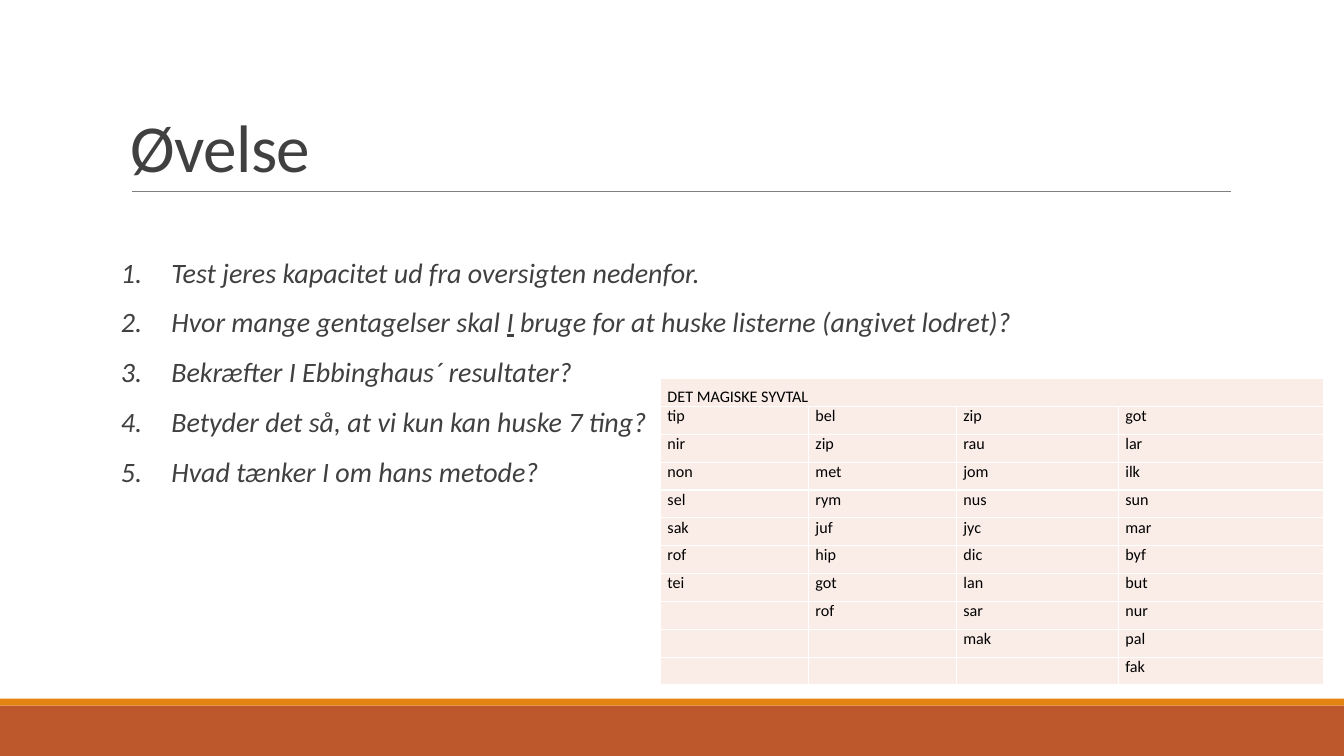
from pptx import Presentation, util as u
from pptx.dml.color import RGBColor
from pptx.enum import shapes, text
from pptx.oxml.xmlchemy import OxmlElement

Pt = u.Pt
RUST = RGBColor(0xBD, 0x58, 0x2C)
ORANGE = RGBColor(0xE4, 0x83, 0x12)
GREY = RGBColor(0x80, 0x80, 0x80)
DARK = RGBColor(0x40, 0x40, 0x40)
BLACK = RGBColor(0, 0, 0)
PALE = RGBColor(0xFA, 0xED, 0xE7)


def add_run(paragraph, words, size, colour):
    run = paragraph.add_run()
    run.text = words
    run.font.name = "Calibri"
    run.font.size = Pt(size)
    run.font.color.rgb = colour
    return run


def add_child(parent, tag, **attributes):
    child = OxmlElement(tag)
    for name, value in attributes.items():
        child.set(name, value)
    parent.append(child)
    return child


deck = Presentation()
deck.slide_width, deck.slide_height = Pt(960), Pt(540)
slide = deck.slides.add_slide(deck.slide_layouts[6])

# Footer bands
for top, height, colour in [(504, 36, RUST), (499, 5, ORANGE)]:
    band = slide.shapes.add_shape(
        shapes.MSO_SHAPE.RECTANGLE, Pt(0), Pt(top), Pt(960), Pt(height))
    band.shadow.inherit = False
    band.fill.solid()
    band.fill.fore_color.rgb = colour
    band.line.fill.background()

# Rule under the title
rule = slide.shapes.add_connector(
    shapes.MSO_CONNECTOR.STRAIGHT, Pt(94.3), Pt(136.6), Pt(879), Pt(136.6))
rule.line.color.rgb = GREY
rule.line.width = Pt(0.5)
add_child(rule._element.spPr, "a:effectLst")

# Title
title = slide.shapes.add_textbox(Pt(86.4), Pt(22.5), Pt(792), Pt(114.3)).text_frame
title.word_wrap = True
title.vertical_anchor = text.MSO_ANCHOR.BOTTOM
heading = title.paragraphs[0]
heading.line_spacing = 0.85
heading_run = add_run(heading, "Øvelse", 48, DARK)
heading_run.font._element.set("spc", "-50")

# Numbered questions, each a list of (words, underlined)
questions = [
    [("Test jeres kapacitet ud fra oversigten nedenfor.", False)],
    [("Hvor mange gentagelser skal ", False), ("I", True),
     (" bruge for at huske listerne (angivet lodret)?", False)],
    [("Bekræfter I Ebbinghaus´ resultater?", False)],
    [("Betyder det så, at vi kun kan huske 7 ting?", False)],
    [("Hvad tænker I om hans metode?", False)],
]
exercise = slide.shapes.add_textbox(Pt(86.4), Pt(185), Pt(792), Pt(277)).text_frame
exercise.word_wrap = True
exercise.margin_left = exercise.margin_right = Pt(0)
exercise.margin_top = exercise.margin_bottom = Pt(0)
for number, parts in enumerate(questions):
    question = exercise.add_paragraph() if number else exercise.paragraphs[0]
    question.line_spacing = 0.9
    question.space_before = Pt(12 if number else 0)
    question.space_after = Pt(2)
    props = question._p.get_or_add_pPr()
    props.set("marL", str(Pt(36)))
    props.set("indent", str(-Pt(36)))
    add_child(props, "a:buFont", typeface="+mj-lt")
    add_child(props, "a:buAutoNum", type="arabicPeriod")
    for words, underlined in parts:
        run = add_run(question, words, 20, DARK)
        run.font.italic = True
        run.font.underline = underlined

# Syllable lists, one per column
syllables = [
    "tip nir non sel sak rof tei".split(),
    "bel zip met rym juf hip got rof".split(),
    "zip rau jom nus jyc dic lan sar mak".split(),
    "got lar ilk sun mar byf but nur pal fak".split(),
]
row_count = 1 + max(map(len, syllables))
grid = slide.shapes.add_table(
    row_count, len(syllables), Pt(471.9), Pt(270.4), Pt(474), Pt(219)).table
grid.first_row = grid.horz_banding = False
for column, width in zip(grid.columns, [105.7, 105.7, 115.7, 146.6]):
    column.width = Pt(width)
for row in grid.rows:
    row.height = Pt(19.9)
grid.cell(0, 0).merge(grid.cell(0, len(syllables) - 1))

for r in range(row_count):
    for c, column_words in enumerate(syllables):
        cell = grid.cell(r, c)
        cell.margin_left = cell.margin_right = Pt(4.9)
        cell.margin_top = cell.margin_bottom = Pt(0)
        for side in ("a:lnL", "a:lnR", "a:lnT", "a:lnB"):
            border = add_child(cell._tc.get_or_add_tcPr(), side, w=str(Pt(1)))
            add_child(add_child(border, "a:solidFill"), "a:srgbClr", val="FFFFFF")
        cell.fill.solid()
        cell.fill.fore_color.rgb = PALE
        entry = cell.text_frame.paragraphs[0]
        if r == 0 and c == 0:
            cell.vertical_anchor = text.MSO_ANCHOR.BOTTOM
            add_run(entry, "DET MAGISKE SYVTAL", 11.5, BLACK)
        elif 0 < r <= len(column_words):
            add_run(entry, column_words[r - 1], 11.5, BLACK)
        else:
            # Keep empty cells from stretching their row
            add_child(entry._p, "a:endParaRPr", sz="1150")

deck.save("out.pptx")
